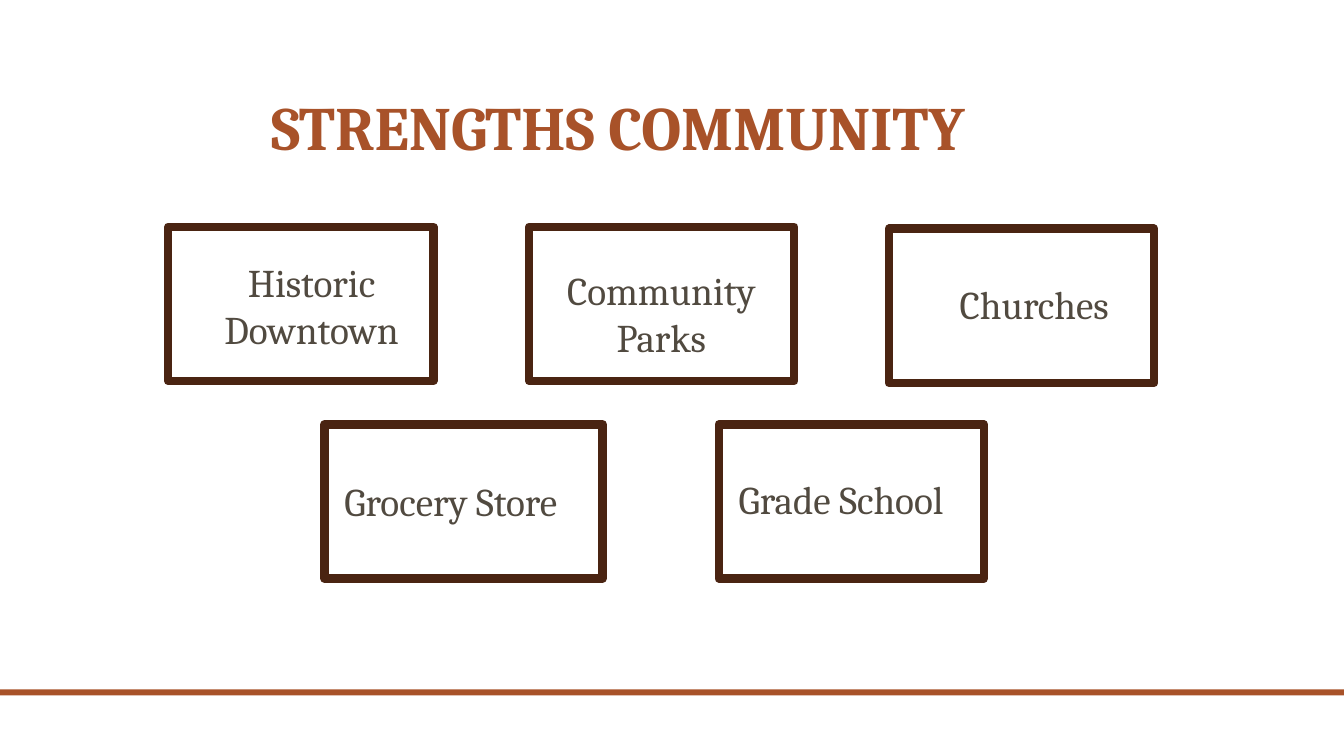
from pptx import Presentation
from pptx.dml.color import RGBColor
from pptx.enum.shapes import MSO_SHAPE
from pptx.enum.text import MSO_ANCHOR, MSO_AUTO_SIZE, PP_ALIGN
from pptx.util import Pt

RUST = "A85229"
BROWN = "4A2412"
GREY = "514A40"
FRAME_WIDTH = 189.4
FRAME_HEIGHT = 110.2

FRAMES = [
    (120.2, 162, FRAME_WIDTH),
    (231.8, 303.1, 198.7),
    (513.4, 303.1, FRAME_WIDTH),
    (378, 162, FRAME_WIDTH),
    (635, 163.4, FRAME_WIDTH),
]
LABELS = [
    ("Historic Downtown", 142.6, 180.7, 159.8, 75, PP_ALIGN.CENTER),
    ("Community Parks", 385.9, 186.5, 172.8, 75, PP_ALIGN.CENTER),
    ("Churches", 672.5, 196.6, 132.5, 41, PP_ALIGN.CENTER),
    ("Grocery Store", 239, 337.7, 206.6, 41, PP_ALIGN.LEFT),
    ("Grade School", 520.6, 336.2, 175, 41, PP_ALIGN.LEFT),
]


def color(value):
    return RGBColor.from_string(value)


def write(text_frame, text, size, font_color, alignment, bold=False):
    text_frame.word_wrap = True
    text_frame.text = text
    paragraph = text_frame.paragraphs[0]
    paragraph.alignment = alignment
    font = paragraph.runs[0].font
    font.name = "Cambria"
    font.size = Pt(size)
    font.bold = bold
    font.color.rgb = color(font_color)
    return paragraph


def add_title(slide, text):
    title = slide.shapes.title
    title.left, title.top = Pt(186.5), Pt(58.3)
    title.width, title.height = Pt(570.2), Pt(62.6)
    text_frame = title.text_frame
    text_frame.auto_size = MSO_AUTO_SIZE.NONE
    text_frame.vertical_anchor = MSO_ANCHOR.BOTTOM
    paragraph = write(text_frame, text, 44, RUST, PP_ALIGN.LEFT, bold=True)
    paragraph.line_spacing = 0.9


def add_rectangle(slide, left, top, width, height):
    shape = slide.shapes.add_shape(
        MSO_SHAPE.RECTANGLE, Pt(left), Pt(top), Pt(width), Pt(height))
    shape.shadow.inherit = False
    return shape


def add_rule(slide):
    rule = add_rectangle(slide, 0, 492.5, 960, 4.3)
    rule.fill.solid()
    rule.fill.fore_color.rgb = color(RUST)
    rule.line.fill.background()


def add_frame(slide, left, top, width):
    frame = add_rectangle(slide, left, top, width, FRAME_HEIGHT)
    frame.fill.background()
    frame.line.color.rgb = color(BROWN)
    frame.line.width = Pt(6)


def add_label(slide, text, left, top, width, height, alignment):
    label = slide.shapes.add_textbox(Pt(left), Pt(top), Pt(width), Pt(height))
    label.text_frame.auto_size = MSO_AUTO_SIZE.SHAPE_TO_FIT_TEXT
    write(label.text_frame, text, 28, GREY, alignment)


def main():
    presentation = Presentation()
    presentation.slide_width = Pt(960)
    presentation.slide_height = Pt(540)
    slide = presentation.slides.add_slide(presentation.slide_layouts[5])
    add_rule(slide)
    add_title(slide, "STRENGTHS COMMUNITY")
    for frame in FRAMES:
        add_frame(slide, *frame)
    for label in LABELS:
        add_label(slide, *label)
    presentation.save("out.pptx")


if __name__ == "__main__":
    main()
